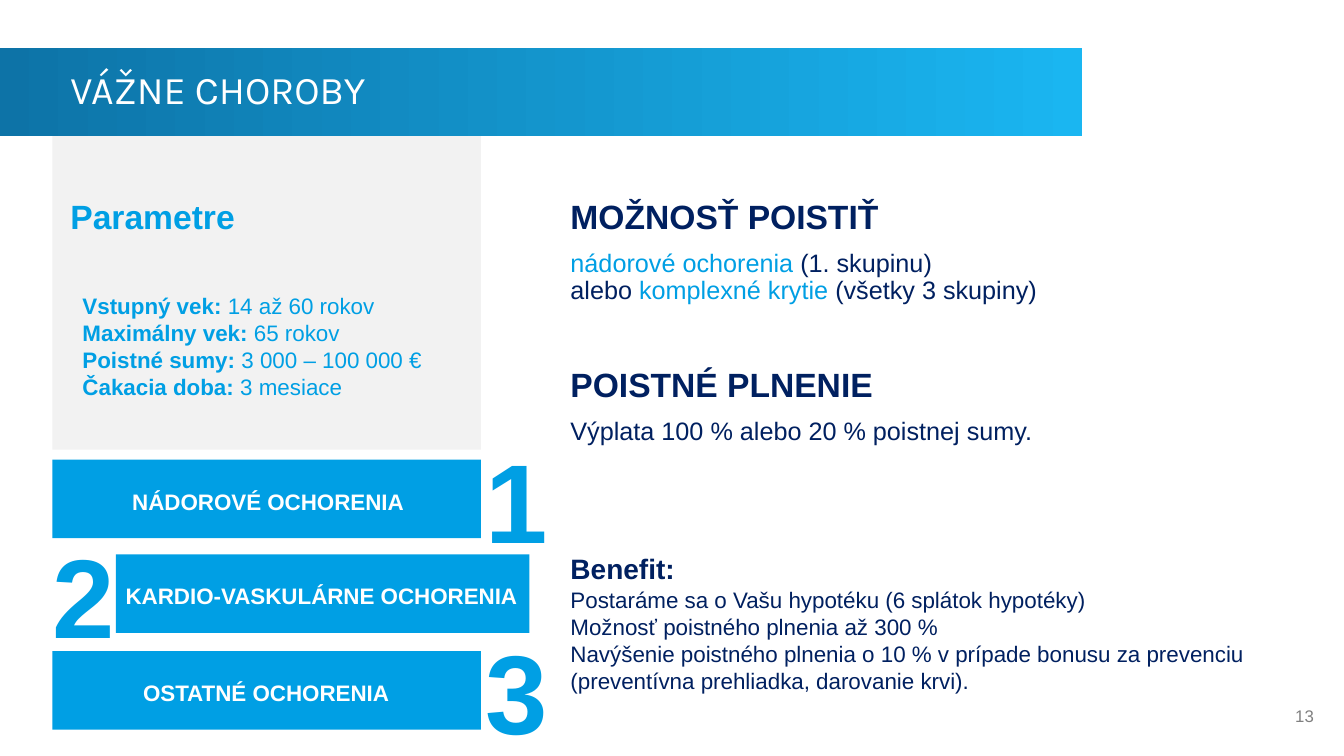
from dataclasses import dataclass

from pptx import Presentation
from pptx.dml.color import RGBColor
from pptx.enum import shapes, text
from pptx.util import Inches, Pt


@dataclass(frozen=True)
class Theme:
    sky: str = "009FE4"
    navy: str = "002060"
    white: str = "FFFFFF"
    panel: str = "F2F2F2"
    grey: str = "808080"
    band_start: str = "0D73A7"
    band_end: str = "1AB6F1"
    body_font: str = "Arial"
    title_font: str = "Karla"
    title: int = 28
    heading: int = 24
    benefit: int = 20
    lead: int = 18
    body: int = 16
    page: int = 12
    numeral: int = 80


T = Theme()
LEFT, CENTER, RIGHT = text.PP_ALIGN.LEFT, text.PP_ALIGN.CENTER, text.PP_ALIGN.RIGHT
TOP, MIDDLE = text.MSO_ANCHOR.TOP, text.MSO_ANCHOR.MIDDLE


def add_rect(s, box, color):
    sp = s.shapes.add_shape(shapes.MSO_SHAPE.RECTANGLE, *map(Inches, box))
    sp.shadow.inherit = False
    sp.fill.solid()
    sp.fill.fore_color.rgb = RGBColor.from_string(color)
    sp.line.fill.background()
    return sp


def add_frame(s, box, anchor=TOP, wrap=True):
    tf = s.shapes.add_textbox(*map(Inches, box)).text_frame
    tf.word_wrap = wrap
    tf.vertical_anchor = anchor
    return tf


def add_par(tf, content, size, color, bold=False, font=T.body_font,
            align=LEFT, before=0, spacing=1.0):
    """Add a paragraph; content is a string or a list of (text, run font settings)."""
    p = tf.paragraphs[0]
    if p.runs:
        p = tf.add_paragraph()
    p.alignment = align
    p.space_before = Pt(before)
    p.line_spacing = spacing
    p.font.name, p.font.size, p.font.bold = font, Pt(size), bold
    p.font.color.rgb = RGBColor.from_string(color)
    for words, style in [(content, {})] if isinstance(content, str) else content:
        if words == "\n":
            p.add_line_break()
            continue
        r = p.add_run()
        r.text = words
        if "bold" in style:
            r.font.bold = style["bold"]
        if "color" in style:
            r.font.color.rgb = RGBColor.from_string(style["color"])


def title_band(s, x, y, w, h):
    band = add_rect(s, (x, y, w, h), T.band_start)
    band.fill.gradient()
    band.fill.gradient_angle = 0
    for stop, color, pos in zip(band.fill.gradient_stops,
                                (T.band_start, T.band_end), (0, 1)):
        stop.color.rgb = RGBColor.from_string(color)
        stop.position = pos
    tf = add_frame(s, (x + 0.6, y, w - 0.77, h), MIDDLE)
    add_par(tf, "VÁŽNE CHOROBY", T.title, T.white, font=T.title_font, spacing=0.9)


def parameters_panel(s, x, y, w, h):
    add_rect(s, (x, y, w, h), T.panel)
    tf = add_frame(s, (x + 0.08, y + 0.59, w - 0.55, 0.5))
    add_par(tf, "Parametre", T.heading, T.sky, True, before=10, spacing=0.9)
    tf = add_frame(s, (x + 0.2, y + 1.06, w - 0.35, h - 1.06), MIDDLE)
    for label, value in (
        ("Vstupný vek:", "14 až 60 rokov"),
        ("Maximálny vek:", "65 rokov"),
        ("Poistné sumy:", "3 000 – 100 000 €"),
        ("Čakacia doba:", "3 mesiace"),
    ):
        add_par(tf, [(label + " ", {"bold": True}), (value, {})], T.body, T.sky)


def disease_group(s, x, y, w, h, numeral, numeral_x, label, label_mid):
    tf = add_frame(s, (numeral_x, y - 0.33, 0.74, 1.45), wrap=False)
    add_par(tf, numeral, T.numeral, T.sky, True, align=CENTER)
    add_rect(s, (x, y, w, h), T.sky)
    tf = add_frame(s, (label_mid - 2.2, y + 0.23, 4.4, 0.37), wrap=False)
    add_par(tf, label, T.body, T.white, True, align=CENTER)


def coverage(s, x, y, w, h):
    tf = add_frame(s, (x, y, w, h))
    key = {"color": T.sky}
    sections = (
        ("MOŽNOSŤ POISTIŤ", 10,
         [("nádorové ochorenia ", key), ("(1. skupinu)", {}), ("\n", {}),
          ("alebo ", {}), ("komplexné krytie ", key), ("(všetky 3 skupiny)", {})]),
        ("POISTNÉ PLNENIE", 45, "Výplata 100 % alebo 20 % poistnej sumy."),
    )
    for heading, gap, body in sections:
        add_par(tf, heading, T.heading, T.navy, True, before=gap, spacing=0.9)
        add_par(tf, body, T.lead, T.navy, before=10, spacing=0.9)


def benefits(s, x, y, w, h):
    tf = add_frame(s, (x, y, w, 0.4))
    add_par(tf, "Benefit:", T.benefit, T.navy, True, before=10, spacing=0.9)
    tf = add_frame(s, (x, y + 0.31, w, h - 0.31))
    for line in (
        "Postaráme sa o Vašu hypotéku (6 splátok hypotéky)",
        "Možnosť poistného plnenia až 300 %",
        "Navýšenie poistného plnenia o 10 % v prípade bonusu za prevenciu "
        "(preventívna prehliadka, darovanie krvi).",
    ):
        add_par(tf, line, T.body, T.navy)


def page_number(s, x, y, w, h):
    add_par(add_frame(s, (x, y, w, h), MIDDLE), "13", T.page, T.grey, align=RIGHT)


def main():
    prs = Presentation()
    prs.slide_width, prs.slide_height = Inches(13.33), Inches(7.5)
    s = prs.slides.add_slide(prs.slide_layouts[6])
    title_band(s, 0, 0.48, 10.73, 0.87)
    parameters_panel(s, 0.52, 1.35, 4.25, 3.11)
    coverage(s, 5.56, 1.94, 7.6, 2.8)
    benefits(s, 5.56, 5.46, 7.7, 1.57)
    groups = (
        (0.52, 4.56, 4.25, "1", 4.72, "NÁDOROVÉ OCHORENIA", 2.66),
        (1.15, 5.5, 4.1, "2", 0.42, "KARDIO-VASKULÁRNE OCHORENIA", 3.19),
        (0.52, 6.46, 4.25, "3", 4.72, "OSTATNÉ OCHORENIA", 2.64),
    )
    for x, y, w, *rest in groups:
        disease_group(s, x, y, w, 0.78, *rest)
    page_number(s, 10.13, 6.9, 3, 0.4)
    prs.save("out.pptx")


if __name__ == "__main__":
    main()
